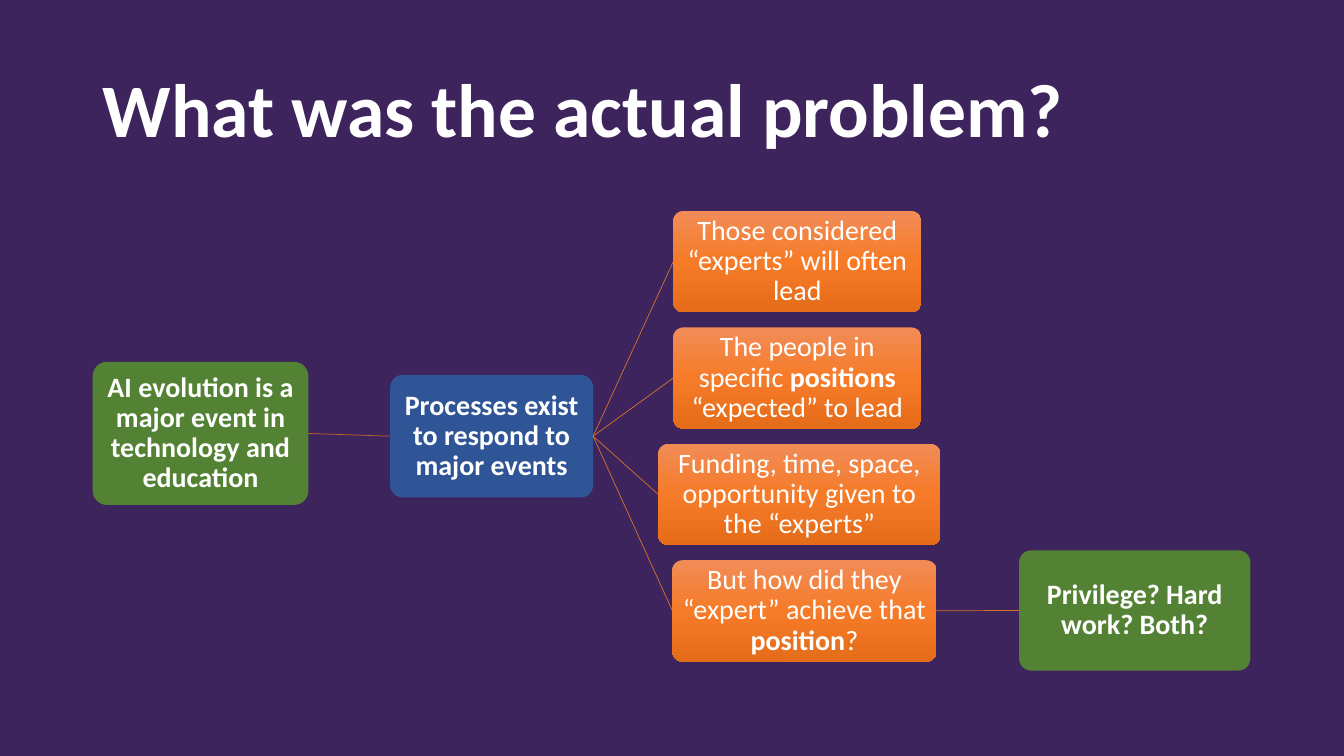
from copy import deepcopy
from pptx import Presentation
from pptx.dml.color import RGBColor as Rgb
from pptx.enum.shapes import MSO_CONNECTOR as Link, MSO_SHAPE as Kind
from pptx.enum.text import MSO_ANCHOR as Anchor, MSO_AUTO_SIZE as Fit, PP_ALIGN as Align
from pptx.oxml.ns import qn
from pptx.oxml.xmlchemy import OxmlElement as Node
from pptx.util import Inches, Pt

WIDE, HIGH = Inches(13.33), Inches(7.5)
HUES = {
    "back": "3E245C", "text": "FFFFFF", "green": "548235", "blue": "2F5597",
    "top": "F18C57", "mid": "F67B28", "low": "E56C19",
    "rust": "BE6427", "line": "D7712C",
}
TOP, STEP, TALL = 27.9, 15.4, 13.4
POINTS = [
    (50.1, 18.45, "Those considered “experts” will often lead"),
    (50.1, 18.45, "The people in specific *positions* “expected” to lead"),
    (48.98, 21, "Funding, time, space, opportunity given to the “experts”"),
    (50.03, 19.65, "But how did they “expert” achieve that *position*?"),
]


def hue(name):
    return Rgb.from_string(HUES[name])


def place(x, y, w, h):
    return [int(size * part / 100) for size, part in
            zip((WIDE, HIGH, WIDE, HIGH), (x, y, w, h))]


def style(para, size, bold, align):
    para.alignment = align
    para.line_spacing = 0.9
    font = para.font
    font.name, font.size, font.bold = "Calibri", Pt(size), bold
    font.color.rgb = hue("text")


def add_title(slide, text):
    title = slide.shapes.title
    title.left, title.top, title.width, title.height = place(6.9, 5.33, 86.2, 19.33)
    frame = title.text_frame
    frame.text = text
    frame.auto_size = Fit.NONE
    frame.vertical_anchor = Anchor.MIDDLE
    style(frame.paragraphs[0], 54, True, Align.LEFT)


def shade(fill):
    fill.gradient()
    fill.gradient_angle = 270
    stops = fill._xPr.find(qn("a:gradFill")).find(qn("a:gsLst"))
    stops.insert(1, deepcopy(stops[0]))
    for stop, name, spot in zip(fill.gradient_stops, ("top", "mid", "low"), (0, 0.5, 1)):
        stop.color.rgb = hue(name)
        stop.position = spot


def add_box(slide, area, text, color=None):
    box = slide.shapes.add_shape(Kind.ROUNDED_RECTANGLE, *place(*area))
    box.adjustments[0] = 0.1
    box.shadow.inherit = False
    box.line.fill.background()
    if color:
        box.fill.solid()
        box.fill.fore_color.rgb = hue(color)
    else:
        shade(box.fill)
    frame = box.text_frame
    frame.word_wrap = True
    frame.vertical_anchor = Anchor.MIDDLE
    frame.margin_left = frame.margin_right = Inches(0.01)
    frame.margin_top = frame.margin_bottom = Inches(0.01)
    para = frame.paragraphs[0]
    style(para, 20, bool(color), Align.CENTER)
    for spot, part in enumerate(text.split("*")):
        run = para.add_run()
        run.text = part
        if spot % 2:
            run.font.bold = True
    return box


def join(slide, start, end, color="line"):
    link = slide.shapes.add_connector(Link.STRAIGHT, 0, 0, 0, 0)
    link.begin_connect(start, 3)
    link.end_connect(end, 1)
    link.line.color.rgb = hue(color)
    link.line.width = Pt(0.5)
    link._element.spPr.append(Node("a:effectLst"))


def main():
    deck = Presentation()
    deck.slide_width, deck.slide_height = WIDE, HIGH
    slide = deck.slides.add_slide(deck.slide_layouts[5])
    back = slide.background.fill
    back.solid()
    back.fore_color.rgb = hue("back")
    add_title(slide, "What was the actual problem?")
    event = add_box(slide, (6.9, 47.87, 16.05, 18.93),
                    "AI evolution is a major event in technology and education", "green")
    process = add_box(slide, (29.03, 49.6, 15.1, 16.2),
                      "Processes exist to respond to major events", "blue")
    join(slide, event, process, "rust")
    for row, (x, w, text) in enumerate(POINTS):
        point = add_box(slide, (x, TOP + row * STEP, w, TALL), text)
        join(slide, process, point)
    cause = add_box(slide, (75.83, 72.8, 17.2, 15.9), "Privilege? Hard work? Both?", "green")
    join(slide, point, cause)
    deck.save("out.pptx")


if __name__ == "__main__":
    main()
